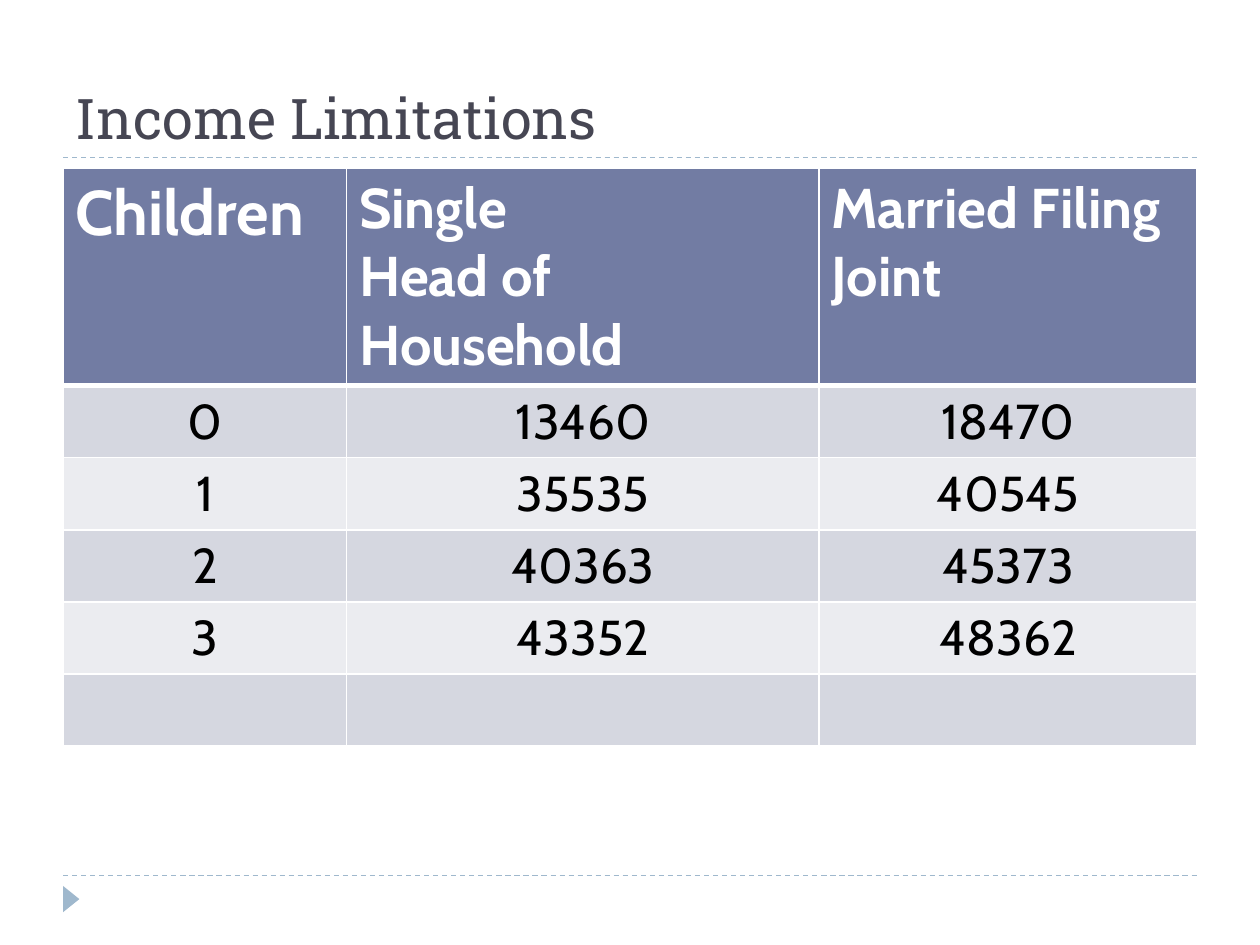
from lxml import etree
from pptx import Presentation
from pptx import util as u
from pptx.dml.color import RGBColor
from pptx.enum import dml, shapes, text
from pptx.oxml import parse_xml
from pptx.oxml.ns import nsdecls, qn

INK = RGBColor(0x46, 0x46, 0x53)
ACCENT = RGBColor(0x9F, 0xB8, 0xCD)
HEADER = RGBColor(0x72, 0x7C, 0xA3)
BAND_DARK = RGBColor(0xD5, 0xD7, 0xE0)
BAND_LIGHT = RGBColor(0xEB, 0xEC, 0xF0)
WHITE = RGBColor(0xFF, 0xFF, 0xFF)
BLACK = RGBColor(0, 0, 0)

LEFT, WIDTH = u.Cm(1.27), u.Cm(22.86)


def set_borders(cell, **points):
    """Draw white borders; the keys are L, R, T and B in schema order."""
    properties = cell._tc.get_or_add_tcPr()
    for position, (side, width) in enumerate(points.items()):
        properties.insert(position, parse_xml(
            f'<a:ln{side} {nsdecls("a")} w="{u.Pt(width)}"><a:solidFill>'
            f'<a:srgbClr val="{WHITE}"/></a:solidFill></a:ln{side}>'))


def format_text(frame, font, size, color, bold=False, align=None):
    for para in frame.paragraphs:
        para.alignment = align
        for span in para.runs:
            span.font.name = font
            span.font.size = u.Pt(size)
            span.font.bold = bold
            span.font.color.rgb = color


deck = Presentation()
deck.slide_width, deck.slide_height = u.Cm(25.4), u.Cm(19.05)
page = deck.slides.add_slide(deck.slide_layouts[5])

# Dashed rules under the title and above the footer
for y in (u.Cm(3.18), u.Cm(17.65)):
    rule = page.shapes.add_connector(
        shapes.MSO_CONNECTOR.STRAIGHT, LEFT, y, LEFT + WIDTH, y)
    rule.line.color.rgb = ACCENT
    rule.line.width = u.Pt(0.75)
    rule.line.dash_style = dml.MSO_LINE.DASH
    etree.SubElement(rule._element.spPr, qn("a:effectLst"))

# Footer marker
marker = page.shapes.add_shape(
    shapes.MSO_SHAPE.ISOSCELES_TRIANGLE,
    u.Cm(1.17), u.Cm(17.96), u.Cm(0.53), u.Cm(0.33))
marker.rotation = 90
marker.shadow.inherit = False
marker.fill.solid()
marker.fill.fore_color.rgb = ACCENT
marker.line.fill.background()

# Title
title = page.shapes.title
title.left, title.top, title.width, title.height = LEFT, u.Cm(0.43), WIDTH, u.Cm(2.74)
title.text_frame.text = "Income Limitations"
title.text_frame.vertical_anchor = text.MSO_ANCHOR.BOTTOM
format_text(title.text_frame, "Roboto Slab", 32, INK, align=text.PP_ALIGN.LEFT)

# Income table
rows = [
    ("Children", "Single\nHead of Household", "Married Filing Joint"),
    ("0", "13460", "18470"),
    ("1", "35535", "40545"),
    ("2", "40363", "45373"),
    ("3", "43352", "48362"),
    ("", "", ""),
]
table = page.shapes.add_table(
    len(rows), 3, LEFT, u.Cm(3.39), WIDTH, u.Cm(11.6)).table
for column, width in zip(table.columns, (5.72, 9.52, 7.62)):
    column.width = u.Cm(width)

for r, values in enumerate(rows):
    table.rows[r].height = u.Cm(1.45 if r else 4.35)
    for c, value in enumerate(values):
        cell = table.cell(r, c)
        cell.text_frame.text = value
        cell.fill.solid()
        if r == 0:
            cell.fill.fore_color.rgb = HEADER
            format_text(cell.text_frame, "Cabin", 32 if c else 36, WHITE, bold=True)
        else:
            cell.fill.fore_color.rgb = BAND_DARK if r % 2 else BAND_LIGHT
            format_text(cell.text_frame, "Cabin", 28, BLACK,
                        align=text.PP_ALIGN.CENTER)
        set_borders(cell, L=1, R=1, T=3 if r == 1 else 1, B=1 if r else 3)

deck.save("out.pptx")
